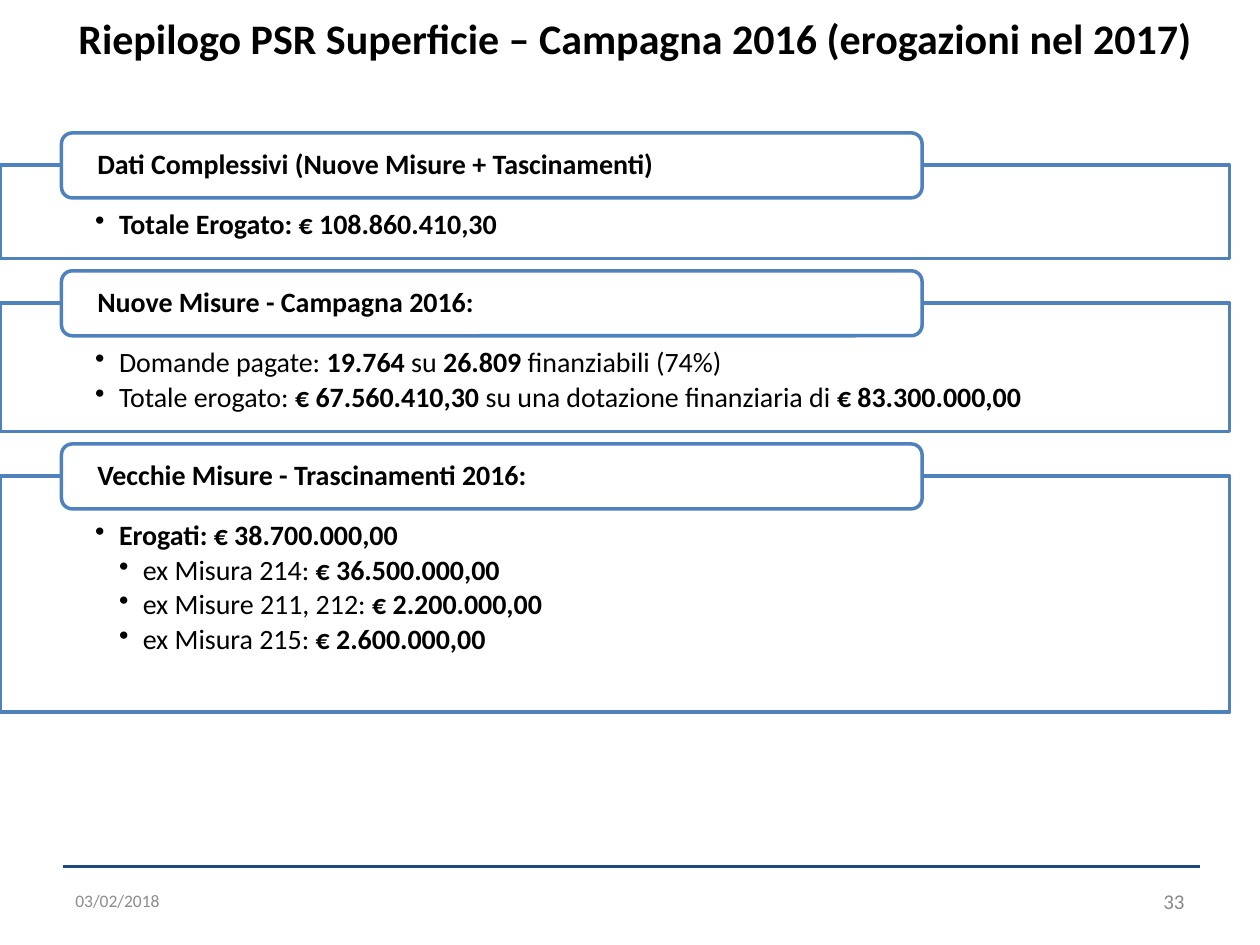
from lxml import etree
from pptx import Presentation
from pptx.dml.color import RGBColor
from pptx.enum import shapes, text
from pptx.oxml import ns
from pptx.util import Cm, Pt

FONT = "Calibri"
BLACK = RGBColor(0x00, 0x00, 0x00)
WHITE = RGBColor(0xFF, 0xFF, 0xFF)
BLUE = RGBColor(0x4F, 0x81, 0xBD)
NAVY = RGBColor(0x1F, 0x49, 0x7D)
DATE_GRAY = RGBColor(0x8C, 0x8C, 0x8C)
NUMBER_GRAY = RGBColor(0x89, 0x89, 0x89)

# Content: each section is (heading, frame height in cm, bullets);
# each bullet is (level, runs); each run is (text, bold)
TITLE = "Riepilogo PSR Superficie – Campagna 2016 (erogazioni nel 2017)"
SECTIONS = [
    ("Dati Complessivi (Nuove Misure + Tascinamenti)", 1.88, [
        (1, [("Totale Erogato: € 108.860.410,30", True)]),
    ]),
    ("Nuove Misure - Campagna 2016:", 2.59, [
        (1, [("Domande pagate: ", False), ("19.764", True), (" su ", False),
             ("26.809", True), (" finanziabili (74%)", False)]),
        (1, [("Totale erogato: ", False), ("€ 67.560.410,30", True),
             (" su una dotazione finanziaria di ", False),
             ("€ 83.300.000,00", True)]),
    ]),
    ("Vecchie Misure - Trascinamenti 2016:", 4.75, [
        (1, [("Erogati: € 38.700.000,00", True)]),
        (2, [("ex Misura 214: ", False), ("€ 36.500.000,00", True)]),
        (2, [("ex Misure 211, 212: ", False), ("€ 2.200.000,00", True)]),
        (2, [("ex Misura 215: ", False), ("€ 2.600.000,00", True)]),
    ]),
]
# Footer: text, left in cm, size, colour, alignment
FOOTER = [
    ("03/02/2018", 1.27, 10, DATE_GRAY, text.PP_ALIGN.LEFT),
    ("33", 18.21, 12, NUMBER_GRAY, text.PP_ALIGN.RIGHT),
]

# Layout in cm
FIRST_TOP, FRAME_WIDTH, FRAME_GAP = 3.33, 24.79, 0.9
TAB_LEFT, TAB_WIDTH, TAB_HEIGHT, TAB_RISE = 1.24, 17.35, 1.31, 0.65
BULLET_INDENT = 0.48


def add_run(paragraph, words, size, bold=False, color=BLACK):
    run = paragraph.add_run()
    run.text = words
    run.font.name = FONT
    run.font.size = Pt(size)
    run.font.bold = bold
    run.font.color.rgb = color


def add_box(slide, kind, left, top, width, height, side, above, below, anchor):
    """White box with a blue outline; returns its text frame."""
    shape = slide.shapes.add_shape(
        kind, Cm(left), Cm(top), Cm(width), Cm(height))
    shape.shadow.inherit = False
    shape.fill.solid()
    shape.fill.fore_color.rgb = WHITE
    shape.line.color.rgb = BLUE
    shape.line.width = Pt(2)
    frame = shape.text_frame
    frame.word_wrap = True
    frame.vertical_anchor = anchor
    frame.margin_left = frame.margin_right = Cm(side)
    frame.margin_top, frame.margin_bottom = Cm(above), Cm(below)
    return frame


def format_paragraph(paragraph, space_after):
    paragraph.alignment = text.PP_ALIGN.LEFT
    paragraph.line_spacing = 0.9
    paragraph.space_after = Pt(space_after)


def add_bullet(paragraph, level):
    properties = paragraph._p.get_or_add_pPr()
    properties.set("marL", str(Cm(BULLET_INDENT * level)))
    properties.set("indent", str(-Cm(BULLET_INDENT)))
    etree.SubElement(properties, ns.qn("a:buChar")).set("char", "•")
    paragraph.level = level


def add_section(slide, top, heading, height, bullets):
    body = add_box(slide, shapes.MSO_SHAPE.RECTANGLE, 0, top, FRAME_WIDTH,
                   height, 1.92, 0.92, 0.3, text.MSO_ANCHOR.TOP)
    for index, (level, runs) in enumerate(bullets):
        paragraph = body.add_paragraph() if index else body.paragraphs[0]
        add_bullet(paragraph, level)
        format_paragraph(paragraph, 2.4)
        for words, bold in runs:
            add_run(paragraph, words, 16, bold)

    tab = add_box(slide, shapes.MSO_SHAPE.ROUNDED_RECTANGLE, TAB_LEFT,
                  top - TAB_RISE, TAB_WIDTH, TAB_HEIGHT, 0.66, 0, 0,
                  text.MSO_ANCHOR.MIDDLE)
    format_paragraph(tab.paragraphs[0], 5.6)
    add_run(tab.paragraphs[0], heading, 16, True)


def add_footer(slide):
    line = slide.shapes.add_connector(
        shapes.MSO_CONNECTOR.STRAIGHT, Cm(1.27), Cm(17.47), Cm(24.2), Cm(17.47))
    line.line.color.rgb = NAVY
    line.line.width = Pt(1.5)
    etree.SubElement(line._element.spPr, ns.qn("a:effectLst"))
    for words, left, size, color, alignment in FOOTER:
        box = slide.shapes.add_textbox(Cm(left), Cm(17.65), Cm(5.92), Cm(1.02))
        frame = box.text_frame
        frame.word_wrap = True
        frame.vertical_anchor = text.MSO_ANCHOR.MIDDLE
        frame.paragraphs[0].alignment = alignment
        add_run(frame.paragraphs[0], words, size, color=color)


def main():
    presentation = Presentation()
    presentation.slide_width, presentation.slide_height = Cm(25.4), Cm(19.05)
    slide = presentation.slides.add_slide(presentation.slide_layouts[5])

    # Title
    title = slide.shapes.title
    title.left, title.top = Cm(0.5), Cm(0.13)
    title.width, title.height = Cm(24.61), Cm(1.8)
    title.text_frame.auto_size = text.MSO_AUTO_SIZE.NONE
    title.text_frame.vertical_anchor = text.MSO_ANCHOR.TOP
    title.text_frame.paragraphs[0].alignment = text.PP_ALIGN.CENTER
    add_run(title.text_frame.paragraphs[0], TITLE, 24, True)

    # Sections, stacked with equal gaps
    top = FIRST_TOP
    for heading, height, bullets in SECTIONS:
        add_section(slide, top, heading, height, bullets)
        top += height + FRAME_GAP

    add_footer(slide)
    presentation.save("out.pptx")


if __name__ == "__main__":
    main()
